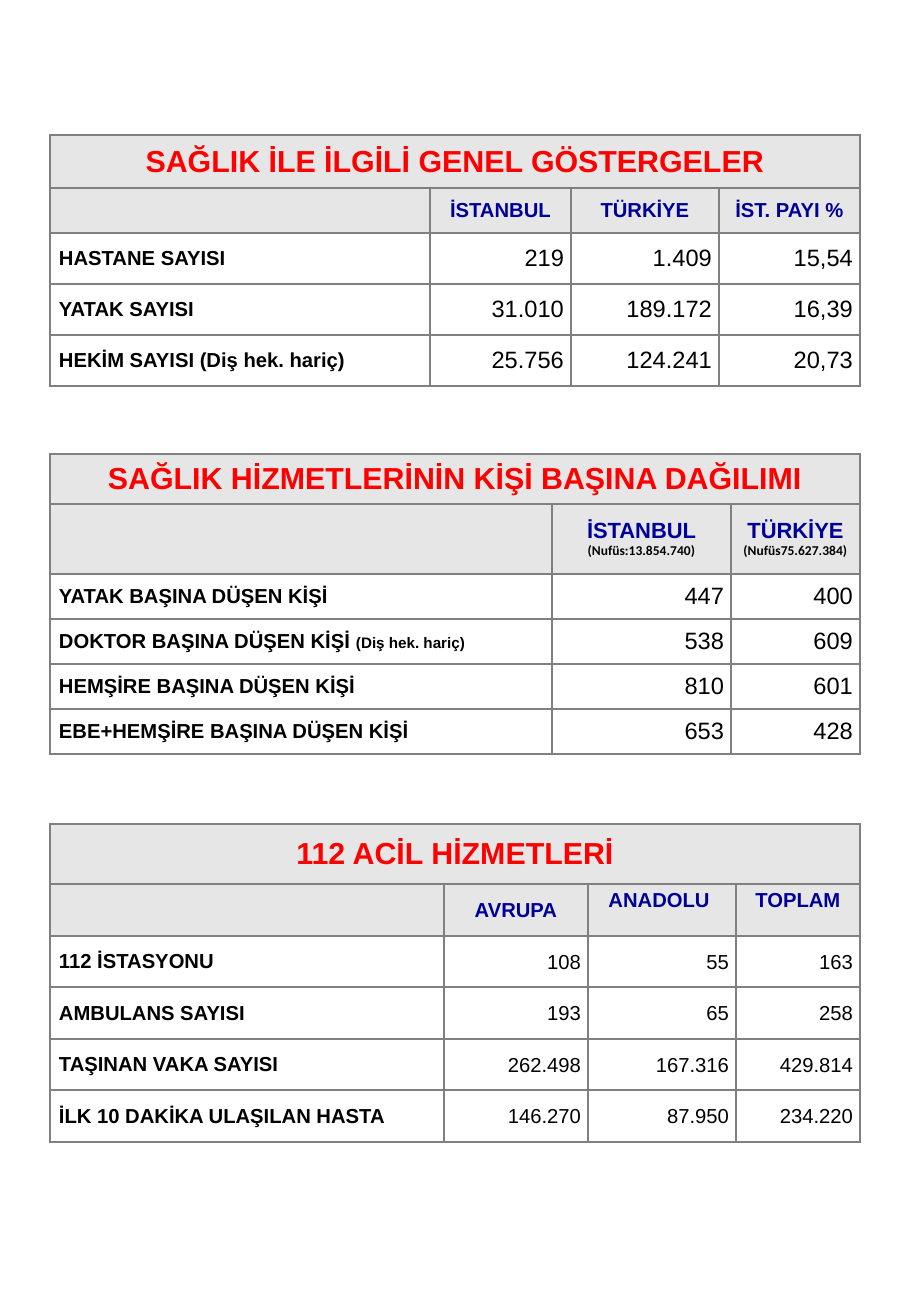
from collections import namedtuple

from lxml import etree
from pptx import Presentation
from pptx.dml.color import RGBColor
from pptx.enum.text import MSO_ANCHOR, PP_ALIGN
from pptx.oxml.ns import qn
from pptx.util import Emu, Pt

EMU_PER_PX = 7526
SLIDE_WIDTH, SLIDE_HEIGHT = 911, 1316
TABLE_LEFT = 50

RED = RGBColor(0xFF, 0x00, 0x00)
NAVY = RGBColor(0x00, 0x00, 0x99)
BLACK = RGBColor(0x00, 0x00, 0x00)
WHITE = RGBColor(0xFF, 0xFF, 0xFF)
PALE_GRAY = RGBColor(0xE7, 0xE6, 0xE6)
BORDER_GRAY = RGBColor(0x80, 0x80, 0x80)

LEFT, CENTER, RIGHT = PP_ALIGN.LEFT, PP_ALIGN.CENTER, PP_ALIGN.RIGHT
TOP, MIDDLE = MSO_ANCHOR.TOP, MSO_ANCHOR.MIDDLE

TextStyle = namedtuple("TextStyle", "size color bold font", defaults=(BLACK, True, "Arial"))
TITLE = TextStyle(18, RED)
HEADING = TextStyle(12, NAVY)
LARGE_HEADING = TextStyle(13, NAVY)
POPULATION = TextStyle(8, font="Calibri")
LABEL = TextStyle(12)
SMALL_LABEL = TextStyle(9)
LARGE_NUMBER = TextStyle(14, bold=False)
NUMBER = TextStyle(12, bold=False)

# Cell margins: left, top, right, bottom
TEXT_MARGINS = (9, 5, 9, 5)
NUMBER_MARGINS = (9, 5, 7, 5)
TIGHT_MARGINS = (1, 1, 7, 0)
NO_MARGINS = (0, 0, 0, 0)


class TableSlide:
    def __init__(self, presentation):
        presentation.slide_width = self.px(SLIDE_WIDTH)
        presentation.slide_height = self.px(SLIDE_HEIGHT)
        self.slide = presentation.slides.add_slide(presentation.slide_layouts[6])

    def px(self, length):
        return Emu(length * EMU_PER_PX)

    def borders(self, cell):
        properties = cell._tc.get_or_add_tcPr()
        for side in ("a:lnL", "a:lnR", "a:lnT", "a:lnB"):
            line = etree.SubElement(properties, qn(side), w=str(Pt(1)))
            fill = etree.SubElement(line, qn("a:solidFill"))
            etree.SubElement(fill, qn("a:srgbClr"), val=str(BORDER_GRAY))

    def cell(self, cell, paragraphs, fill, alignment, margins, anchor=MIDDLE):
        """Fill one cell; each paragraph is a list of (text, style) runs."""
        self.borders(cell)
        cell.fill.solid()
        cell.fill.fore_color.rgb = fill
        cell.vertical_anchor = anchor
        (cell.margin_left, cell.margin_top,
         cell.margin_right, cell.margin_bottom) = map(self.px, margins)
        for index, runs in enumerate(paragraphs):
            frame = cell.text_frame
            paragraph = frame.add_paragraph() if index else frame.paragraphs[0]
            paragraph.alignment = alignment
            for text, style in runs:
                run = paragraph.add_run()
                run.text = text
                run.font.size = Pt(style.size)
                run.font.name = style.font
                run.font.bold = style.bold
                run.font.color.rgb = style.color

    def table(self, top, widths, heights, title, headings, rows,
              number_style=LARGE_NUMBER, number_margins=NUMBER_MARGINS):
        frame = self.slide.shapes.add_table(
            len(heights), len(widths), self.px(TABLE_LEFT), self.px(top),
            self.px(sum(widths)), self.px(sum(heights)))
        table = frame.table
        table.first_row = table.horz_banding = False
        for column, width in zip(table.columns, widths):
            column.width = self.px(width)
        for row, height in zip(table.rows, heights):
            row.height = self.px(height)

        # Title across all columns
        for column in range(len(widths)):
            paragraphs = [] if column else [[(title, TITLE)]]
            self.cell(table.cell(0, column), paragraphs, PALE_GRAY, CENTER, TEXT_MARGINS)
        table.cell(0, 0).merge(table.cell(0, len(widths) - 1))

        # Column headings
        self.cell(table.cell(1, 0), [], PALE_GRAY, CENTER, NO_MARGINS)
        for column, (anchor, paragraphs) in enumerate(headings, 1):
            self.cell(table.cell(1, column), paragraphs, PALE_GRAY, CENTER,
                      TEXT_MARGINS, anchor)

        # Row labels and numbers
        for row, (label, *numbers) in enumerate(rows, 2):
            self.cell(table.cell(row, 0), [label], WHITE, LEFT, TEXT_MARGINS)
            for column, number in enumerate(numbers, 1):
                self.cell(table.cell(row, column), [[(number, number_style)]],
                          WHITE, RIGHT, number_margins)


def main():
    presentation = Presentation()
    slide = TableSlide(presentation)

    # General indicators
    slide.table(
        135, [380, 141, 148, 141], [53, 45, 51, 51, 51],
        "SAĞLIK İLE İLGİLİ GENEL GÖSTERGELER",
        [(MIDDLE, [[(text, HEADING)]]) for text in ("İSTANBUL", "TÜRKİYE", "İST. PAYI %")],
        [([("HASTANE SAYISI", LABEL)], "219", "1.409", "15,54"),
         ([("YATAK SAYISI", LABEL)], "31.010", "189.172", "16,39"),
         ([("HEKİM SAYISI (Diş hek. hariç)", LABEL)], "25.756", "124.241", "20,73")])

    # Services per person
    regions = (("İSTANBUL", "(Nufüs:13.854.740)"), ("TÜRKİYE", "(Nufüs75.627.384)"))
    slide.table(
        454, [502, 179, 129], [50, 70] + [45] * 4,
        "SAĞLIK HİZMETLERİNİN KİŞİ BAŞINA DAĞILIMI",
        [(MIDDLE, [[(region, LARGE_HEADING)], [(population, POPULATION)]])
         for region, population in regions],
        [([("YATAK BAŞINA DÜŞEN KİŞİ", LABEL)], "447", "400"),
         ([("DOKTOR BAŞINA DÜŞEN KİŞİ ", LABEL), ("(Diş hek. hariç)", SMALL_LABEL)],
          "538", "609"),
         ([("HEMŞİRE BAŞINA DÜŞEN KİŞİ", LABEL)], "810", "601"),
         ([("EBE+HEMŞİRE BAŞINA DÜŞEN KİŞİ", LABEL)], "653", "428")])

    # Emergency services
    sides = ((MIDDLE, "AVRUPA"), (TOP, "ANADOLU "), (TOP, "TOPLAM"))
    slide.table(
        824, [394, 144, 148, 124], [60, 52, 51, 52, 51, 52],
        "112 ACİL HİZMETLERİ",
        [(anchor, [[(text, HEADING)]]) for anchor, text in sides],
        [([("112 İSTASYONU", LABEL)], "108", "55", "163"),
         ([("AMBULANS SAYISI", LABEL)], "193", "65", "258"),
         ([("TAŞINAN VAKA SAYISI", LABEL)], "262.498", "167.316", "429.814"),
         ([("İLK 10 DAKİKA ULAŞILAN HASTA", LABEL)], "146.270", "87.950", "234.220")],
        NUMBER, TIGHT_MARGINS)

    presentation.save("out.pptx")


if __name__ == "__main__":
    main()
